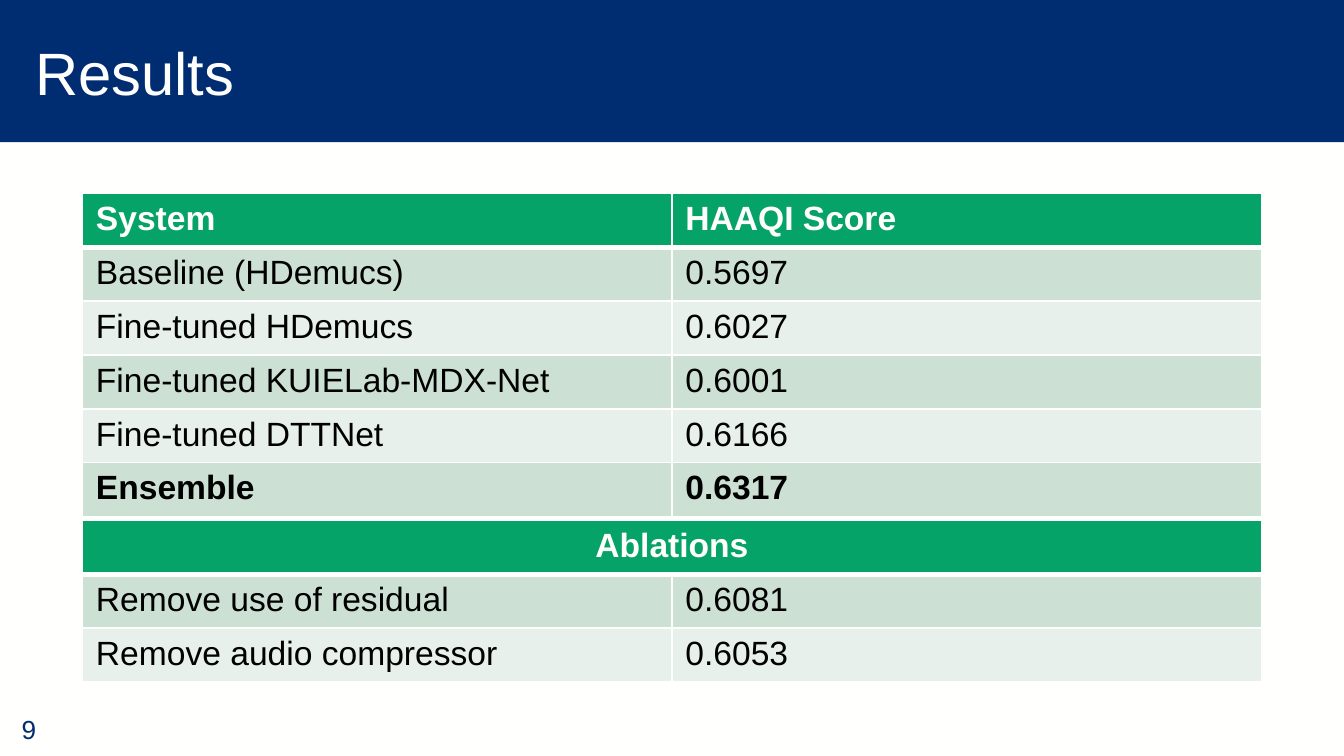
from lxml import etree
from pptx import Presentation
from pptx.dml.color import RGBColor
from pptx.enum.shapes import MSO_SHAPE
from pptx.enum.text import MSO_ANCHOR, MSO_AUTO_SIZE, PP_ALIGN
from pptx.oxml.ns import qn
from pptx.util import Cm, Pt

RECT = MSO_SHAPE.RECTANGLE
MIDDLE, BOTTOM = MSO_ANCHOR.MIDDLE, MSO_ANCHOR.BOTTOM
LEFT, CENTER = PP_ALIGN.LEFT, PP_ALIGN.CENTER
FIXED = MSO_AUTO_SIZE.NONE

COLORS = {"navy": "002D72", "white": "FFFFFE", "green": "05A367",
          "dark": "CCE0D3", "light": "E7F0EB", "black": "000000"}
ROW = 0.96   # table row height in cm
COL = 11.14  # table column width in cm

SCORES = [("System", "HAAQI Score"),
          ("Baseline (HDemucs)", "0.5697"),
          ("Fine-tuned HDemucs", "0.6027"),
          ("Fine-tuned KUIELab-MDX-Net", "0.6001"),
          ("Fine-tuned DTTNet", "0.6166"),
          ("Ensemble", "0.6317")]
CUTS = [("Ablations", ""),
        ("Remove use of residual", "0.6081"),
        ("Remove audio compressor", "0.6053")]


def color(name):
    return RGBColor.from_string(COLORS[name])


def apply(item, values):
    for name, value in values.items():
        setattr(item, name, value)


def write(frame, text, size, tint, bold=False, align=LEFT):
    par = frame.paragraphs[0]
    par.alignment = align
    run = par.add_run()
    run.text = text
    apply(run.font, {"name": "Arial", "size": Pt(size), "bold": bold})
    run.font.color.rgb = color(tint)


def add_band(slide):
    band = slide.shapes.add_shape(RECT, 0, 0, Cm(25.4), Cm(2.69))
    band.shadow.inherit = False
    band.fill.solid()
    band.fill.fore_color.rgb = color("navy")
    band.line.fill.background()
    # Keep the band behind the title
    slide.shapes.title._element.addprevious(band._element)


def set_title(slide, text):
    title = slide.shapes.title
    apply(title, {"left": Cm(0.41), "top": Cm(0.15),
                  "width": Cm(24.61), "height": Cm(2.39)})
    apply(title.text_frame, {"auto_size": FIXED, "word_wrap": True,
                             "vertical_anchor": MIDDLE})
    write(title.text_frame, text, 32, "white")


def add_number(slide, text):
    box = slide.shapes.add_textbox(Cm(0.41), Cm(13.31), Cm(1.55), Cm(0.76))
    apply(box.text_frame, {"word_wrap": True, "vertical_anchor": BOTTOM,
                           "margin_left": 0, "margin_right": 0,
                           "margin_top": 0, "margin_bottom": 0})
    write(box.text_frame, text, 14, "navy")


def add_border(cell, side, width):
    props = cell._tc.get_or_add_tcPr()
    line = etree.SubElement(props, qn(f"a:ln{side}"), w=str(Pt(width)))
    fill = etree.SubElement(line, qn("a:solidFill"))
    etree.SubElement(fill, qn("a:srgbClr"), val=COLORS["white"])


def add_grid(slide, top, rows, strong=()):
    frame = slide.shapes.add_table(len(rows), 2, Cm(1.56), Cm(top),
                                   Cm(2 * COL), Cm(ROW * len(rows)))
    table = frame.table
    for col in table.columns:
        col.width = Cm(COL)
    for i, row in enumerate(rows):
        table.rows[i].height = Cm(ROW)
        head = i == 0
        wide = not row[1]
        shade = "green" if head else "dark" if i % 2 else "light"
        for j, text in enumerate(row):
            cell = table.cell(i, j)
            # Thick rule under the header, thin rules elsewhere
            widths = {"L": 1, "R": 1, "T": 3 if i == 1 else 1,
                      "B": 3 if head else 1}
            for side, width in widths.items():
                add_border(cell, side, width)
            cell.fill.solid()
            cell.fill.fore_color.rgb = color(shade)
            if text:
                write(cell.text_frame, text, 18,
                      "white" if head else "black",
                      head or row[0] in strong, CENTER if wide else LEFT)
        if wide:
            table.cell(i, 0).merge(table.cell(i, 1))


def main():
    deck = Presentation()
    apply(deck, {"slide_width": Cm(25.4), "slide_height": Cm(14.29)})
    slide = deck.slides.add_slide(deck.slide_layouts[5])
    slide.background.fill.solid()
    slide.background.fill.fore_color.rgb = color("white")

    # Header and page number
    add_band(slide)
    set_title(slide, "Results")
    add_number(slide, "9")

    # Score tables
    add_grid(slide, 3.66, SCORES, strong=("Ensemble",))
    add_grid(slide, 9.84, CUTS)
    deck.save("out.pptx")


if __name__ == "__main__":
    main()
